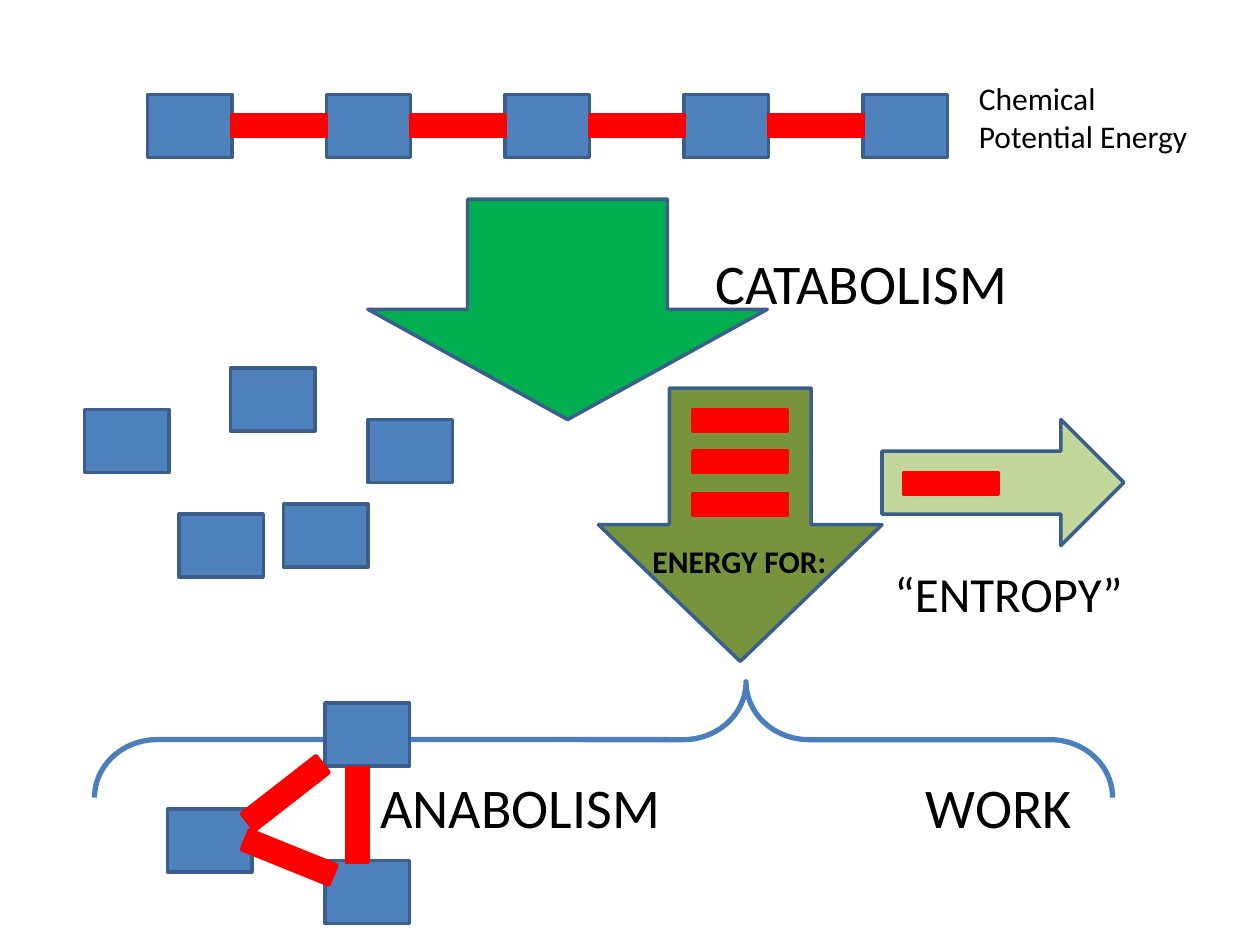
from dataclasses import dataclass
from typing import Optional

from pptx import Presentation
from pptx.dml.color import RGBColor
from pptx.enum.shapes import MSO_SHAPE
from pptx.util import Inches, Pt

RECT = MSO_SHAPE.RECTANGLE
DOWN_ARROW = MSO_SHAPE.DOWN_ARROW
RIGHT_ARROW = MSO_SHAPE.RIGHT_ARROW
BRACE = MSO_SHAPE.RIGHT_BRACE


@dataclass(frozen=True)
class Theme:
    font: str = "Calibri"
    text: str = "000000"
    monomer: str = "4F81BD"
    bond: str = "FF0000"
    outline: str = "3A5F8C"
    brace: str = "4B7EBC"
    catabolism: str = "00B050"
    energy: str = "77933C"
    entropy: str = "C3D69B"
    process_size: int = 32
    entropy_size: int = 28
    note_size: int = 18
    line: int = 2
    brace_line: int = 3


@dataclass(frozen=True)
class Box:
    left: float
    top: float
    width: float
    height: float


@dataclass(frozen=True)
class Label:
    text: str
    box: Box
    size: int
    bold: bool = False


THEME = Theme()
MONOMER_W, MONOMER_H = 0.67, 0.5
BOND_W, BOND_H = 0.75, 0.17
CHAIN_LENGTH = 5
CHAIN_LEFT, CHAIN_TOP = 1.17, 0.75
CHAIN_PITCH = MONOMER_W + BOND_W

# Loose monomers: left, top
RELEASED = [(2.25, 4), (1.42, 4.08), (2.92, 3.33), (1.83, 2.92), (0.67, 3.25)]
REBUILT = [(2.58, 6.83), (2.58, 5.58), (1.33, 6.42)]
# Bonds of the rebuilt molecule: left, top, rotation
REBUILT_BONDS = [(1.92, 6.72, 22), (1.89, 6.21, 322.1), (2.46, 6.38, 90)]
ENERGY_BOND_TOPS = [3.25, 3.58, 3.92]

CATABOLISM = Label("CATABOLISM", Box(5.58, 1.92, 3.08, 0.64), THEME.process_size)
LABELS = [
    Label("“ENTROPY”", Box(7, 4.42, 2.42, 0.57), THEME.entropy_size),
    Label("ENERGY FOR:", Box(5.08, 4.25, 2.25, 0.4), THEME.note_size, bold=True),
    Label("ANABOLISM", Box(2.92, 6.08, 2.67, 0.64), THEME.process_size),
    Label("WORK", Box(7.25, 6.08, 3.33, 0.64), THEME.process_size),
    Label("Chemical Potential Energy", Box(7.67, 0.58, 2.08, 0.71), THEME.note_size),
]


def inches(box: Box) -> list:
    return [Inches(v) for v in (box.left, box.top, box.width, box.height)]


def draw_shape(slide, kind, box: Box, fill: Optional[str], line: str = THEME.outline,
               width: float = THEME.line, rotation: float = 0):
    shape = slide.shapes.add_shape(kind, *inches(box))
    shape.shadow.inherit = False
    shape.rotation = rotation
    if fill is None:
        shape.fill.background()
    else:
        shape.fill.solid()
        shape.fill.fore_color.rgb = RGBColor.from_string(fill)
    shape.line.color.rgb = RGBColor.from_string(line)
    shape.line.width = Pt(width)
    return shape


def draw_monomer(slide, left: float, top: float) -> None:
    draw_shape(slide, RECT, Box(left, top, MONOMER_W, MONOMER_H), THEME.monomer)


def draw_bond(slide, left: float, top: float, rotation: float = 0) -> None:
    draw_shape(slide, RECT, Box(left, top, BOND_W, BOND_H), THEME.bond,
               line=THEME.bond, rotation=rotation)


def draw_label(slide, label: Label) -> None:
    frame = slide.shapes.add_textbox(*inches(label.box)).text_frame
    frame.word_wrap = True
    run = frame.paragraphs[0].add_run()
    run.text = label.text
    font_format = {"name": THEME.font, "size": Pt(label.size), "bold": label.bold}
    for attribute, value in font_format.items():
        setattr(run.font, attribute, value)
    run.font.color.rgb = RGBColor.from_string(THEME.text)


def main() -> None:
    prs = Presentation()
    prs.slide_width, prs.slide_height = Inches(10), Inches(7.5)
    slide = prs.slides.add_slide(prs.slide_layouts[6])

    # Energy and entropy arrows
    draw_shape(slide, DOWN_ARROW, Box(4.75, 3.08, 2.25, 2.17), THEME.energy)
    draw_shape(slide, RIGHT_ARROW, Box(7, 3.33, 1.92, 1), THEME.entropy)

    # Polymer chain
    for i in range(CHAIN_LENGTH):
        draw_monomer(slide, CHAIN_LEFT + i * CHAIN_PITCH, CHAIN_TOP)
    for i in range(CHAIN_LENGTH - 1):
        draw_bond(slide, CHAIN_LEFT + MONOMER_W + i * CHAIN_PITCH,
                  CHAIN_TOP + (MONOMER_H - BOND_H) / 2)

    # Catabolism and the monomers it releases
    draw_shape(slide, DOWN_ARROW, Box(2.92, 1.58, 3.17, 1.75), THEME.catabolism)
    draw_label(slide, CATABOLISM)
    for left, top in RELEASED:
        draw_monomer(slide, left, top)

    # Bond energy inside the arrows
    for top in ENERGY_BOND_TOPS:
        draw_bond(slide, 5.5, top)
    draw_bond(slide, 7.17, 3.75)

    # Brace over the uses of energy
    brace = draw_shape(slide, BRACE, Box(4.33, 1.83, 0.92, 8.08), None,
                       line=THEME.brace, width=THEME.brace_line, rotation=270)
    brace.adjustments[0], brace.adjustments[1] = 0.54, 0.64

    # Molecule rebuilt by anabolism
    for left, top in REBUILT:
        draw_monomer(slide, left, top)
    for left, top, rotation in REBUILT_BONDS:
        draw_bond(slide, left, top, rotation)

    for label in LABELS:
        draw_label(slide, label)

    prs.save("out.pptx")


if __name__ == "__main__":
    main()
